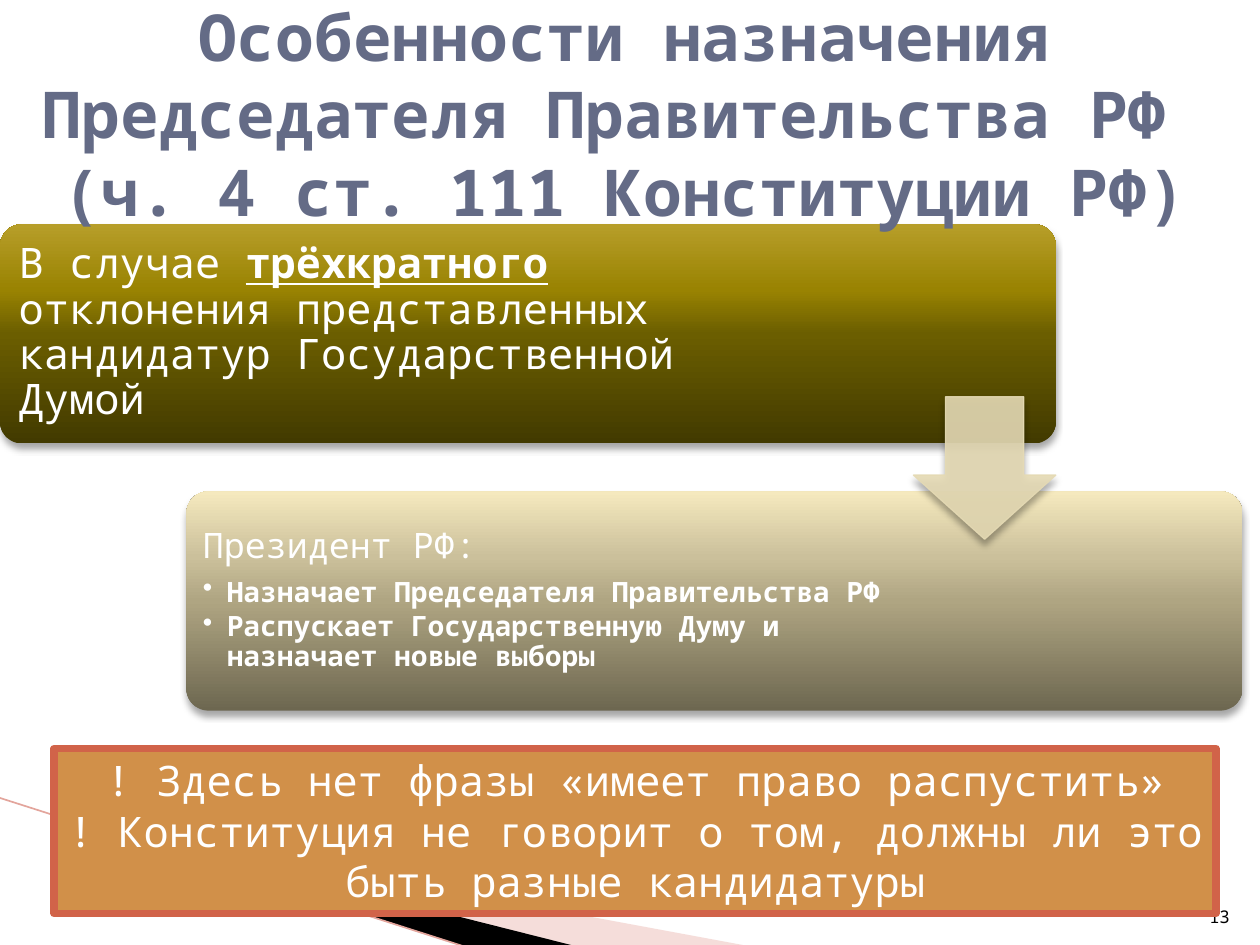
from lxml.etree import SubElement
from pptx import Presentation
from pptx.dml.color import RGBColor
from pptx.enum.shapes import MSO_CONNECTOR as Connector, MSO_SHAPE as Shape
from pptx.enum.text import MSO_ANCHOR as Anchor, PP_ALIGN as Align
from pptx.oxml.ns import qn
from pptx.util import Inches, Pt

FONT = "Noto Sans Mono"
COLORS = {
    "white": "FFFFFF", "black": "000000", "title": "646B86",
    "ribbon": "E7ACA4", "ribbon_line": "E3A59C", "arrow": "E5DAB4",
    "note": "D19049", "note_line": "D16349",
}
GRADIENTS = {
    "olive": {0: "423A00", 50: "6B5E00", 70: "998302", 100: "B79E29"},
    "cream": {0: "6D6750", 50: "AFA582", 70: "CBC09B", 100: "F5E9BE"},
}


def color(name):
    return RGBColor.from_string(COLORS[name])


def add_node(parent, tag, **values):
    return SubElement(parent, qn(tag), {key: str(value) for key, value in values.items()})


def set_alpha(fill, name, percent):
    fill.solid()
    fill.fore_color.rgb = color(name)
    node = fill._xPr.find(qn("a:solidFill"))[0]
    add_node(node, "a:alpha", val=percent * 1000)


def set_gradient(shape, stops):
    shape.fill.gradient()
    gradient = shape._element.spPr.find(qn("a:gradFill"))
    for child in list(gradient):
        gradient.remove(child)
    stop_list = add_node(gradient, "a:gsLst")
    for position, value in stops.items():
        stop = add_node(stop_list, "a:gs", pos=position * 1000)
        add_node(stop, "a:srgbClr", val=value)
    add_node(gradient, "a:lin", ang=270 * 60000, scaled=0)


def add_shadow(shape):
    effects = shape._element.spPr.find(qn("a:effectLst"))
    shadow = add_node(effects, "a:outerShdw", blurRad=Pt(4), dist=Pt(3),
                      dir=90 * 60000, rotWithShape=0)
    shade = add_node(shadow, "a:srgbClr", val=COLORS["black"])
    add_node(shade, "a:alpha", val=35000)


def add_block(page, kind, place, adjustments=()):
    shape = page.shapes.add_shape(kind, *map(Inches, place))
    shape.shadow.inherit = False
    shape.line.fill.background()
    for index, value in enumerate(adjustments):
        shape.adjustments[index] = value
    return shape


def add_card(page, place, gradient):
    card = add_block(page, Shape.ROUNDED_RECTANGLE, place, [0.1])
    set_gradient(card, GRADIENTS[gradient])
    add_shadow(card)


def add_ribbon(page, points, name, percent):
    corners = [(Inches(x), Inches(y)) for x, y in points]
    builder = page.shapes.build_freeform(*corners[0], scale=1.0)
    builder.add_line_segments(corners[1:], close=True)
    ribbon = builder.convert_to_shape()
    ribbon.shadow.inherit = False
    ribbon.line.fill.background()
    set_alpha(ribbon.fill, name, percent)


def add_ribbon_line(page, start, end):
    line = page.shapes.add_connector(Connector.STRAIGHT, *map(Inches, start + end))
    line.line.color.rgb = color("ribbon_line")
    line.line.width = Pt(0.95)
    add_node(line._element.spPr, "a:effectLst")


def add_bullet(para):
    properties = para._p.get_or_add_pPr()
    properties.set("marL", str(Inches(0.19)))
    properties.set("indent", str(-Inches(0.19)))
    add_node(properties, "a:buChar", char="•")


def add_spans(para, spans, size, name):
    for text, styles in spans:
        for index, line in enumerate(text.split("\n")):
            if index:
                para.add_line_break()
            span = para.add_run()
            span.text = line
            span.font.color.rgb = color(name)
            formats = {"name": FONT, "size": Pt(size), **styles}
            for key, value in formats.items():
                setattr(span.font, key, value)


def fill_frame(frame, paragraphs, anchor, inset=None):
    frame.word_wrap = True
    frame.vertical_anchor = anchor
    if inset is not None:
        for side in ("left", "top", "right", "bottom"):
            setattr(frame, f"margin_{side}", Inches(inset))
    for index, item in enumerate(paragraphs):
        para = frame.add_paragraph() if index else frame.paragraphs[0]
        if item.get("bullet"):
            add_bullet(para)
        for key, value in item.get("format", {}).items():
            setattr(para, key, value)
        add_spans(para, item["spans"], item["size"], item.get("color", "white"))


def add_text(page, place, paragraphs, anchor=Anchor.MIDDLE, inset=None):
    box = page.shapes.add_textbox(*map(Inches, place))
    fill_frame(box.text_frame, paragraphs, anchor, inset)


def add_arrow(page):
    arrow = add_block(page, Shape.DOWN_ARROW, (7.25, 3.15, 1.13, 1.13))
    arrow.adjustments[0], arrow.adjustments[1] = 0.45, 0.55
    arrow.adjustments[0], arrow.adjustments[1] = 0.55, 0.45
    set_alpha(arrow.fill, "arrow", 90)
    set_alpha(arrow.line.fill, "arrow", 90)
    arrow.line.width = Pt(0.75)
    add_shadow(arrow)


def add_note(page, text):
    note = add_block(page, Shape.RECTANGLE, (0.43, 5.94, 9.22, 1.31))
    note.fill.solid()
    note.fill.fore_color.rgb = color("note")
    note.line.color.rgb = color("note_line")
    note.line.width = Pt(4.33)
    fill_frame(note.text_frame, [
        {"spans": [(text, {})], "size": 24, "format": {"alignment": Align.CENTER}},
    ], Anchor.TOP)


def tight(after):
    return {"line_spacing": 0.9, "space_after": Pt(after)}


def main():
    deck = Presentation()
    deck.slide_width, deck.slide_height = Inches(10), Inches(7.5)
    page = deck.slides.add_slide(deck.slide_layouts[6])
    bold = {"bold": True}

    add_ribbon(page, [(0.55, 6.51), (5.95, 7.51), (4.56, 7.51), (0.55, 6.5)], "ribbon", 40)
    add_ribbon(page, [(0.53, 6.49), (4.57, 7.51), (3.72, 7.52), (0.54, 6.5)], "black", 100)
    add_ribbon_line(page, (-0.01, 6.33), (3.71, 7.52))

    add_card(page, (0, 1.78, 8.38, 1.74), "olive")
    add_text(page, (0.05, 1.83, 6.58, 1.63), [
        {"spans": [("В случае ", {}),
                   ("трёхкратного", {"bold": True, "underline": True}),
                   (" отклонения представленных кандидатур Государственной Думой", {})],
         "size": 24, "format": tight(8.4)},
    ], inset=0.1)

    add_card(page, (1.48, 3.9, 8.38, 1.74), "cream")
    duties = ["Назначает Председателя Правительства РФ",
              "Распускает Государственную Думу и назначает новые выборы"]
    add_text(page, (1.53, 3.95, 5.67, 1.63), [
        {"spans": [("Президент РФ:", {})], "size": 20, "format": tight(7)},
        *({"spans": [(duty, bold)], "size": 16, "bullet": True,
           "format": {"level": 1, **tight(2.4)}} for duty in duties),
    ], inset=0.08)
    add_arrow(page)

    add_text(page, (-0.04, 0.29, 10, 1.21), [
        {"spans": [("Особенности назначения Председателя Правительства РФ \n"
                    "(ч. 4 ст. 111 Конституции РФ)", bold)],
         "size": 36.9, "color": "title", "format": {"alignment": Align.CENTER}},
    ])
    add_text(page, (9.46, 7.01, 0.4, 0.4), [
        {"spans": [("13", {})], "size": 10, "color": "black",
         "format": {"alignment": Align.RIGHT}},
    ], Anchor.BOTTOM)
    add_note(page, "! Здесь нет фразы «имеет право распустить»\n"
                   "! Конституция не говорит о том, должны ли это быть разные кандидатуры")
    deck.save("out.pptx")


if __name__ == "__main__":
    main()
